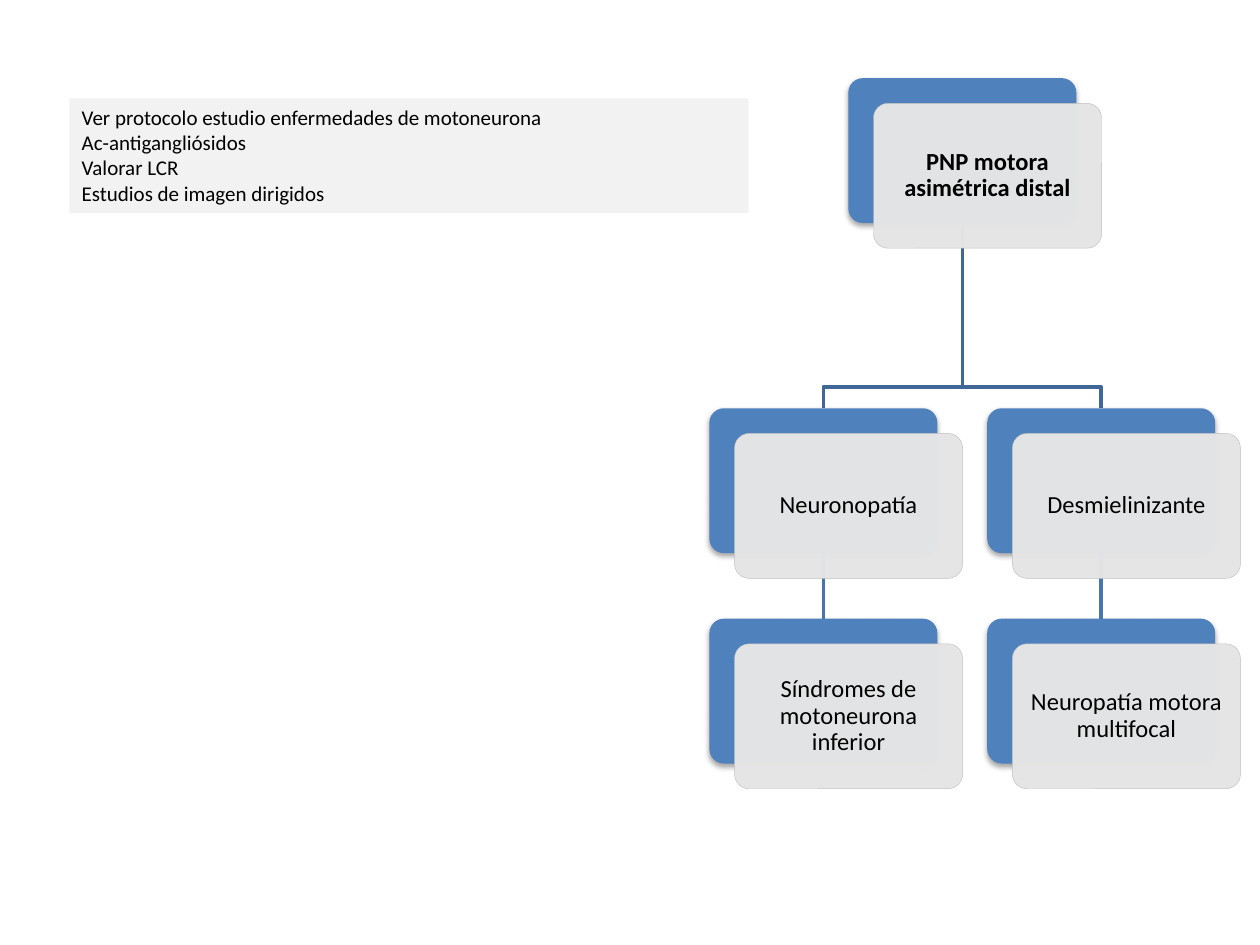
"""Draw the diagnostic tree for distal asymmetric motor polyneuropathy."""
from dataclasses import dataclass

from lxml.etree import SubElement
from pptx import Presentation
from pptx.dml.color import RGBColor
from pptx.enum.shapes import MSO_CONNECTOR as Connector, MSO_SHAPE as Preset
from pptx.enum.text import MSO_ANCHOR as Anchor, PP_ALIGN as Align
from pptx.oxml.ns import qn
from pptx.shapes.autoshape import Shape
from pptx.slide import Slide
from pptx.util import Inches, Pt

BLUE = RGBColor(0x4F, 0x81, 0xBD)
TRUNK_BLUE = RGBColor(0x3F, 0x67, 0x97)
LINK_BLUE = RGBColor(0x48, 0x75, 0xAC)
CARD_GREY = RGBColor(0xE5, 0xE5, 0xE5)
EDGE_GREY = RGBColor(0xBF, 0xBF, 0xBF)
NOTE_GREY = RGBColor(0xF2, 0xF2, 0xF2)
BLACK = RGBColor(0, 0, 0)

FONT = "Calibri"
GRID_LEFT, COLUMN_PITCH = 5.63, 2.205
ROW_TOPS = (0.62, 3.24, 4.91)
CARD_WIDTH, CARD_HEIGHT = 1.81, 1.15
CARD_OFFSET = 0.2
BRANCH_RISE = 0.17
NOTE_LINES = (
    "Ver protocolo estudio enfermedades de motoneurona",
    "Ac-antigangliósidos",
    "Valorar LCR",
    "Estudios de imagen dirigidos",
)


@dataclass(frozen=True)
class Node:
    """A tree node placed by grid column and row."""

    text: str
    column: float
    row: int
    bold: bool = False

    @property
    def left(self) -> float:
        return GRID_LEFT + self.column * COLUMN_PITCH

    @property
    def top(self) -> float:
        return ROW_TOPS[self.row]

    @property
    def center(self) -> float:
        return self.left + CARD_WIDTH / 2


ROOT = Node("PNP motora asimétrica distal", 0.5, 0, True)
BRANCHES = (
    (Node("Neuronopatía", 0, 1), Node("Síndromes de motoneurona inferior", 0, 2)),
    (Node("Desmielinizante", 1, 1), Node("Neuropatía motora multifocal", 1, 2)),
)


def add_card(slide: Slide, node: Node, offset: float, color: RGBColor) -> Shape:
    """Add a rounded card, shifted right and down from its grid place."""
    card = slide.shapes.add_shape(
        Preset.ROUNDED_RECTANGLE, Inches(node.left + offset), Inches(node.top + offset),
        Inches(CARD_WIDTH), Inches(CARD_HEIGHT))
    card.adjustments[0] = 0.1
    card.shadow.inherit = False
    card.fill.solid()
    card.fill.fore_color.rgb = color
    card.line.fill.background()
    return card


def add_back_card(slide: Slide, node: Node) -> Shape:
    """Add the blue card with its soft shadow below."""
    card = add_card(slide, node, 0, BLUE)
    effects = card.element.spPr.find(qn("a:effectLst"))
    shadow = SubElement(effects, qn("a:outerShdw"), blurRad=str(Pt(3.1)),
                        dist=str(Pt(1.8)), dir="5400000", rotWithShape="0")
    color = SubElement(shadow, qn("a:srgbClr"), val="000000")
    SubElement(color, qn("a:alpha"), val="35000")
    return card


def add_front_card(slide: Slide, node: Node) -> None:
    """Add the translucent grey card that carries the node's text."""
    card = add_card(slide, node, CARD_OFFSET, CARD_GREY)
    color = card.element.spPr.find(qn("a:solidFill")).find(qn("a:srgbClr"))
    SubElement(color, qn("a:alpha"), val="98000")
    card.line.color.rgb = EDGE_GREY
    card.line.width = Pt(0.25)
    frame = card.text_frame
    frame.text = node.text
    frame.word_wrap = True
    frame.vertical_anchor = Anchor.MIDDLE
    frame.margin_left = frame.margin_right = Inches(0.1)
    frame.margin_top = frame.margin_bottom = Inches(0.1)
    paragraph = frame.paragraphs[0]
    paragraph.alignment = Align.CENTER
    paragraph.line_spacing = 0.9
    format_runs(paragraph, 14, node.bold)


def format_runs(paragraph, size: int, bold: bool = False) -> None:
    """Set the font of every run in a paragraph."""
    for run in paragraph.runs:
        run.font.name = FONT
        run.font.size = Pt(size)
        run.font.bold = bold
        run.font.color.rgb = BLACK


def add_branch(slide: Slide, parent: Node, child: Node) -> None:
    """Draw the stepped line from a parent's bottom to a child's top."""
    turn = child.top - BRANCH_RISE
    builder = slide.shapes.build_freeform(
        Inches(parent.center), Inches(parent.top + CARD_HEIGHT))
    corners = ((parent.center, turn), (child.center, turn), (child.center, child.top))
    builder.add_line_segments([(Inches(x), Inches(y)) for x, y in corners], close=False)
    branch = builder.convert_to_shape()
    branch.shadow.inherit = False
    branch.fill.background()
    branch.line.color.rgb = TRUNK_BLUE
    branch.line.width = Pt(2)


def add_link(slide: Slide, upper: Shape, lower: Shape) -> None:
    """Join the bottom of one card to the top of the next."""
    link = slide.shapes.add_connector(Connector.STRAIGHT, 0, 0, 0, 0)
    link.begin_connect(upper, 2)
    link.end_connect(lower, 0)
    link.line.color.rgb = LINK_BLUE
    link.line.width = Pt(2)
    SubElement(link.element.spPr, qn("a:effectLst"))


def add_note(slide: Slide) -> None:
    """Add the grey panel listing the studies to order."""
    note = slide.shapes.add_textbox(Inches(0.55), Inches(0.78), Inches(5.39), Inches(0.91))
    note.fill.solid()
    note.fill.fore_color.rgb = NOTE_GREY
    frame = note.text_frame
    frame.word_wrap = True
    frame.text = "\n".join(NOTE_LINES)
    for paragraph in frame.paragraphs:
        format_runs(paragraph, 12)


def main() -> None:
    """Build and save the slide."""
    presentation = Presentation()
    presentation.slide_width, presentation.slide_height = Inches(10), Inches(7.5)
    slide = presentation.slides.add_slide(presentation.slide_layouts[6])
    add_back_card(slide, ROOT)
    for cause, disease in BRANCHES:
        add_branch(slide, ROOT, cause)
        add_link(slide, add_back_card(slide, cause), add_back_card(slide, disease))
    for node in (ROOT, *(node for branch in BRANCHES for node in branch)):
        add_front_card(slide, node)
    add_note(slide)
    presentation.save("out.pptx")


if __name__ == "__main__":
    main()
